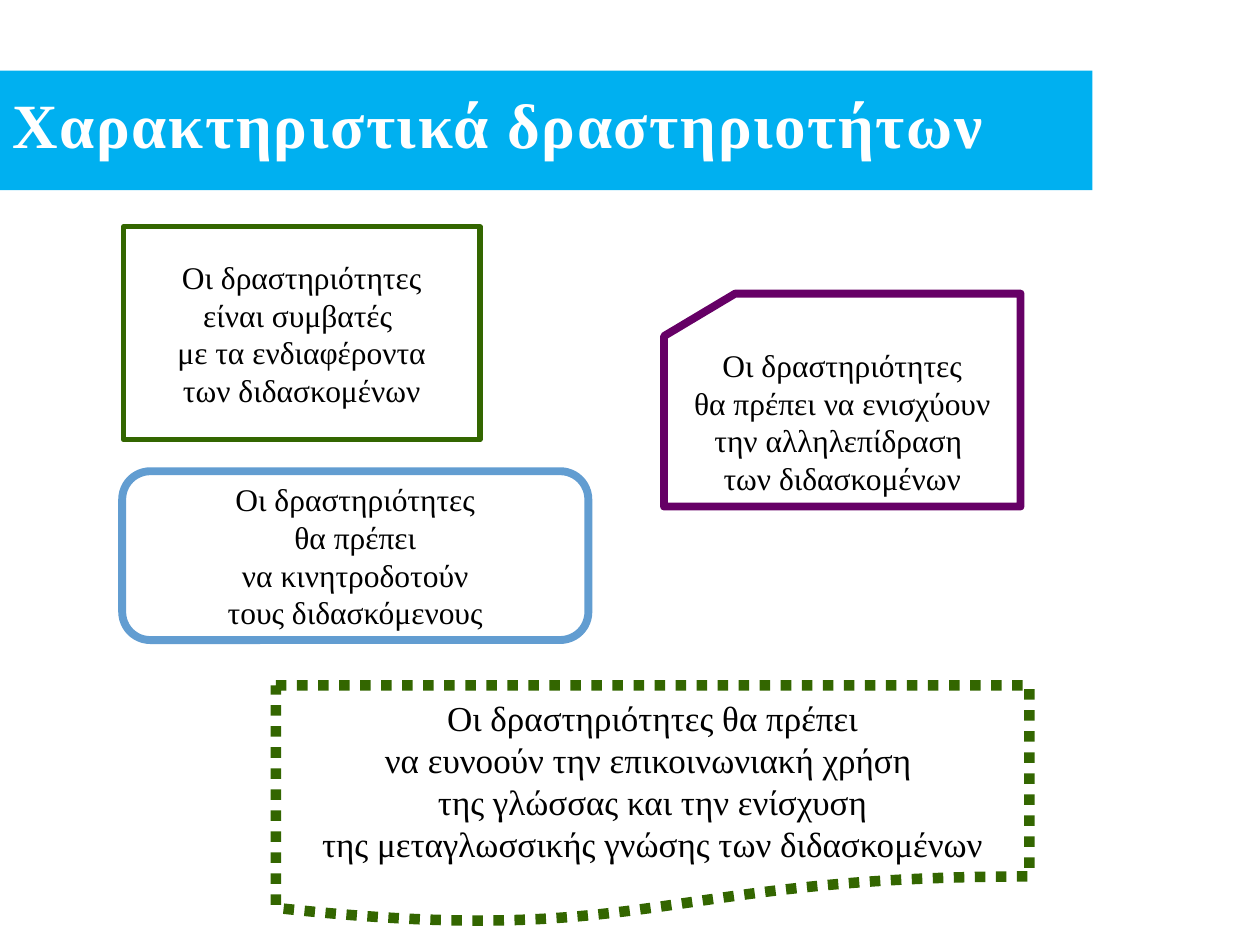
import pptx
import pptx.dml.color
import pptx.enum.dml
import pptx.enum.shapes
import pptx.enum.text
import pptx.util

RGBColor = pptx.dml.color.RGBColor
ShapeType = pptx.enum.shapes.MSO_SHAPE
Align = pptx.enum.text.PP_ALIGN

WHITE = RGBColor(0xFF, 0xFF, 0xFF)
BLACK = RGBColor(0x00, 0x00, 0x00)
SKY = RGBColor(0x00, 0xB0, 0xF0)
GREEN = RGBColor(0x33, 0x66, 0x00)
BLUE = RGBColor(0x62, 0x9D, 0xD1)
PURPLE = RGBColor(0x66, 0x00, 0x66)

FONT = "Times New Roman"
EMU_PER_PX = 914400 // 100  # 100 px to the inch

# kind, box, line colour, line width, dash, text size, lines
CARDS = [
    (ShapeType.RECTANGLE, (98, 180, 283, 169), GREEN, 3, None, 18,
     ["Οι δραστηριότητες", "είναι συμβατές ",
      "με τα ενδιαφέροντα", "των διδασκομένων"]),
    (ShapeType.ROUNDED_RECTANGLE, (97, 374, 370, 134), BLUE, 4.5, None, 18,
     ["Οι δραστηριότητες", "θα πρέπει",
      "να κινητροδοτούν", "τους διδασκόμενους"]),
    (ShapeType.FLOWCHART_CARD, (527, 233, 283, 169), PURPLE, 4.5, None, 18,
     ["Οι δραστηριότητες", "θα πρέπει να ενισχύουν",
      "την αλληλεπίδραση ", "των διδασκομένων"]),
    (ShapeType.FLOWCHART_DOCUMENT, (219, 544, 598, 189), GREEN, 6,
     pptx.enum.dml.MSO_LINE.ROUND_DOT, 20,
     ["Οι δραστηριότητες θα πρέπει", "να ευνοούν την επικοινωνιακή χρήση ",
      "της γλώσσας και την ενίσχυση",
      "της μεταγλωσσικής γνώσης των διδασκομένων"]),
]


def px(length):
    return pptx.util.Emu(length * EMU_PER_PX)


def add_run(paragraph, text, size, color, bold=False):
    run = paragraph.add_run()
    run.text = text
    run.font.name = FONT
    run.font.size = pptx.util.Pt(size)
    run.font.color.rgb = color
    run.font.bold = bold
    return run


def place_title(slide, box, text):
    title = slide.shapes.title
    title.left, title.top, title.width, title.height = map(px, box)
    title.fill.solid()
    title.fill.fore_color.rgb = SKY
    frame = title.text_frame
    frame.auto_size = pptx.enum.text.MSO_AUTO_SIZE.NONE
    frame.vertical_anchor = pptx.enum.text.MSO_ANCHOR.MIDDLE
    paragraph = frame.paragraphs[0]
    paragraph.alignment = Align.LEFT
    paragraph.line_spacing = 0.8
    run = add_run(paragraph, text, 36, WHITE, bold=True)
    run.font._element.set("spc", "100")  # letter spacing of 1 pt


def add_card(slide, kind, box, color, line_width, dash, size, lines):
    """Add an unfilled outlined shape with one centred paragraph per line."""
    shape = slide.shapes.add_shape(kind, *map(px, box))
    shape.shadow.inherit = False
    shape.fill.background()
    shape.line.color.rgb = color
    shape.line.width = pptx.util.Pt(line_width)
    if dash is not None:
        shape.line.dash_style = dash
    frame = shape.text_frame
    frame.word_wrap = False
    frame.vertical_anchor = pptx.enum.text.MSO_ANCHOR.MIDDLE
    for index, line in enumerate(lines):
        paragraph = frame.add_paragraph() if index else frame.paragraphs[0]
        paragraph.alignment = Align.CENTER
        add_run(paragraph, line, size, BLACK)


def main():
    presentation = pptx.Presentation()
    presentation.slide_width = px(1000)
    presentation.slide_height = px(750)
    slide = presentation.slides.add_slide(presentation.slide_layouts[5])
    place_title(slide, (0, 56, 867, 95), "Χαρακτηριστικά δραστηριοτήτων")
    for card in CARDS:
        add_card(slide, *card)
    presentation.save("out.pptx")


if __name__ == "__main__":
    main()
